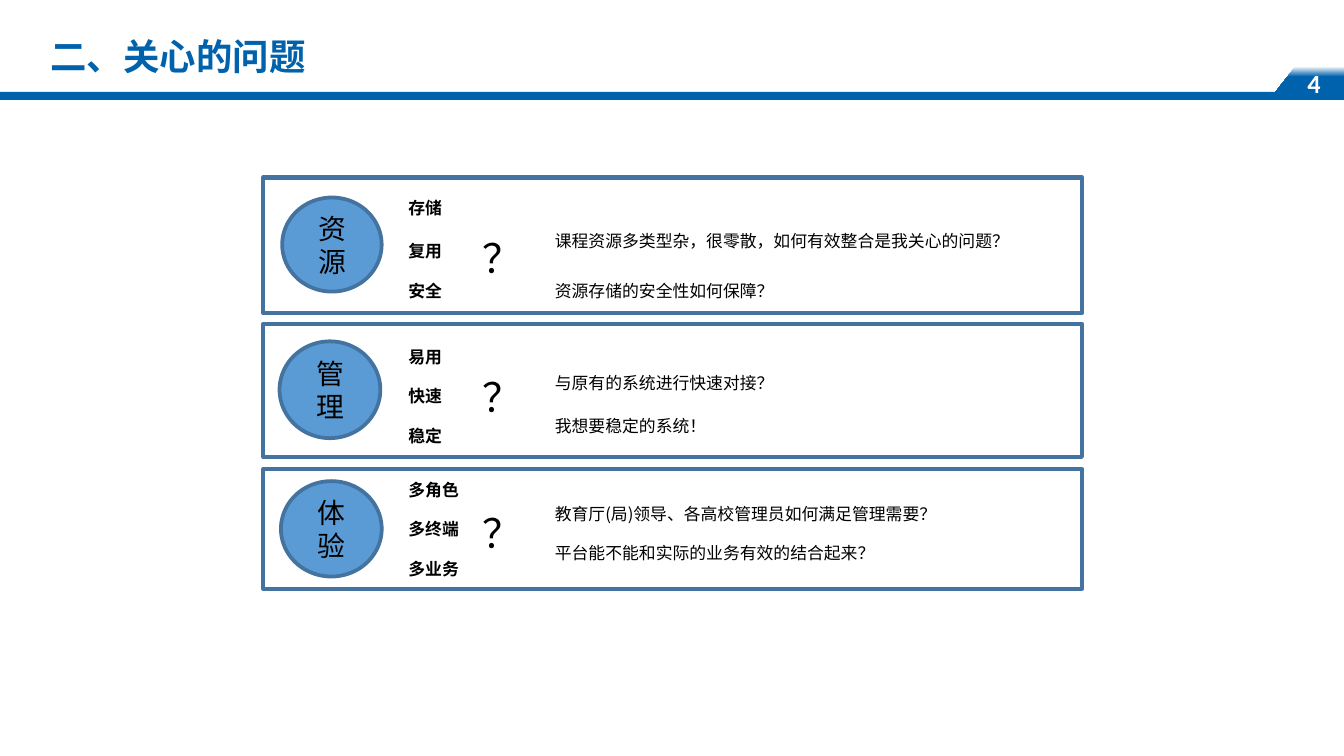
from lxml import etree
from pptx import Presentation
from pptx import util as u
from pptx.dml.color import RGBColor
from pptx.enum import shapes, text
from pptx.oxml import ns

BLUE = RGBColor(0x00, 0x62, 0xAC)
CIRCLE = RGBColor(0x5B, 0x9B, 0xD5)
OUTLINE = RGBColor(0x43, 0x73, 0x9E)
WHITE = RGBColor(0xFF, 0xFF, 0xFF)
BLACK = RGBColor(0, 0, 0)
CJK = "Noto Sans CJK SC"

WIDTH = u.Inches(10)
HEIGHT = u.Emu(WIDTH * 9 // 16)
UNIT = WIDTH / 100  # square grid, 100 columns across the slide

PANEL_LEFT, PANEL_WIDTH = 19.6, 60.9
# Offsets are grid units from the panel's top left corner.
PANELS = [
    dict(top=13.2, height=10.1, label="资源", circle=(1.4, 1.5, 7.4, 7),
         words=["存储", "复用", "安全"], word_tops=(1, 4.2, 7.2), mark_top=3.7,
         questions=["课程资源多类型杂，很零散，如何有效整合是我关心的问题？",
                    "资源存储的安全性如何保障？"], question_tops=(3.5, 7.2)),
    dict(top=24.1, height=9.9, label="管理", circle=(1.2, 1.3, 7.5, 7.2),
         words=["易用", "快速", "稳定"], word_tops=(1.2, 4.1, 7.1), mark_top=3.1,
         questions=["与原有的系统进行快速对接？", "我想要稳定的系统！"],
         question_tops=(3.1, 6.3)),
    dict(top=34.9, height=8.9, label="体验", circle=(1.3, 0.9, 7.5, 7.1),
         words=["多角色", "多终端", "多业务"], word_tops=(0.3, 3.2, 6.2), mark_top=2.4,
         questions=["教育厅(局)领导、各高校管理员如何满足管理需要？",
                    "平台能不能和实际的业务有效的结合起来？"], question_tops=(2.1, 5)),
]


def grid(*values):
    return [u.Emu(round(v * UNIT)) for v in values]


def write(s, content, size, color=BLACK, bold=False, font=CJK, wrap=True,
          anchor=text.MSO_ANCHOR.MIDDLE, align=text.PP_ALIGN.LEFT, margin=0):
    """Put one formatted paragraph into a shape."""
    tf = s.text_frame
    tf.auto_size = text.MSO_AUTO_SIZE.NONE
    tf.word_wrap = wrap
    tf.vertical_anchor = anchor
    tf.margin_left = tf.margin_right = u.Inches(0.1)
    tf.margin_top = tf.margin_bottom = u.Inches(margin)
    p = tf.paragraphs[0]
    p.alignment = align
    r = p.add_run()
    r.text = content
    r.font.size, r.font.bold, r.font.name = u.Pt(size), bold, font
    r.font.color.rgb = color
    east_asian = etree.SubElement(r.font._element, ns.qn("a:ea"))
    east_asian.set("typeface", font)


def add_text(slide, box, content, size, **fmt):
    write(slide.shapes.add_textbox(*grid(*box)), content, size, **fmt)


def add_preset(slide, kind, box, fill=None, line=None, weight=0):
    s = slide.shapes.add_shape(kind, *grid(*box))
    s.shadow.inherit = False
    if fill is None:
        s.fill.background()
    else:
        s.fill.solid()
        s.fill.fore_color.rgb = fill
    if line is None:
        s.line.fill.background()
    else:
        s.line.color.rgb = line
        s.line.width = u.Pt(weight)
    return s


def add_header(slide, title, number):
    """Title, full-width rule and the page tab at its right end."""
    add_preset(slide, shapes.MSO_SHAPE.RECTANGLE, (0, 6.84, 100, 0.6), fill=BLUE)

    outline = [grid(*point) for point in [(94.9, 6.85), (96.4, 4.94), (100, 4.94), (100, 6.85)]]
    fb = slide.shapes.build_freeform(*outline[0])
    fb.add_line_segments(outline[1:], close=True)
    tab = fb.convert_to_shape()
    tab.shadow.inherit = False
    tab.line.fill.background()
    tab.fill.gradient()
    tab.fill.gradient_angle = 270
    for stop, (position, color) in zip(tab.fill.gradient_stops, [(0, WHITE), (0.4, BLUE)]):
        stop.position = position
        stop.color.rgb = color
    add_text(slide, (96.3, 4.65, 3.8, 3.1), number, 14, color=WHITE, bold=True, font="Calibri")

    s = slide.shapes.title
    s.left, s.top, s.width, s.height = grid(2.75, 0.7, 27.9, 5.6)
    write(s, title, 19.5, color=BLUE, bold=True, anchor=text.MSO_ANCHOR.BOTTOM, margin=0.05)


def add_panel(slide, left, top, width, height, panel):
    """Framed row: circled label, keywords, question mark and questions."""
    x, y, w, h = panel["circle"]
    circle = add_preset(slide, shapes.MSO_SHAPE.OVAL, (left + x, top + y, w, h),
                        fill=CIRCLE, line=OUTLINE, weight=2)
    write(circle, panel["label"], 14.9, align=text.PP_ALIGN.CENTER)

    columns = [("words", "word_tops", 9.8, 9.2, True),
               ("questions", "question_tops", 20.7, 39.9, False)]
    for items, tops, x, w, bold in columns:
        for item, y in zip(panel[items], panel[tops]):
            add_text(slide, (left + x, top + y, w, 2.5), item, 9, bold=bold)

    add_preset(slide, shapes.MSO_SHAPE.RECTANGLE, (left, top, width, height),
               line=OUTLINE, weight=2.25)
    add_text(slide, (left + 15.3, top + panel["mark_top"], 5, 4.6), "？", 21.4, wrap=False)


def main():
    prs = Presentation()
    prs.slide_width, prs.slide_height = WIDTH, HEIGHT
    slide = prs.slides.add_slide(prs.slide_layouts[5])
    add_header(slide, "二、关心的问题", "4")
    for panel in PANELS:
        add_panel(slide, PANEL_LEFT, panel["top"], PANEL_WIDTH, panel["height"], panel)
    prs.save("out.pptx")


if __name__ == "__main__":
    main()
